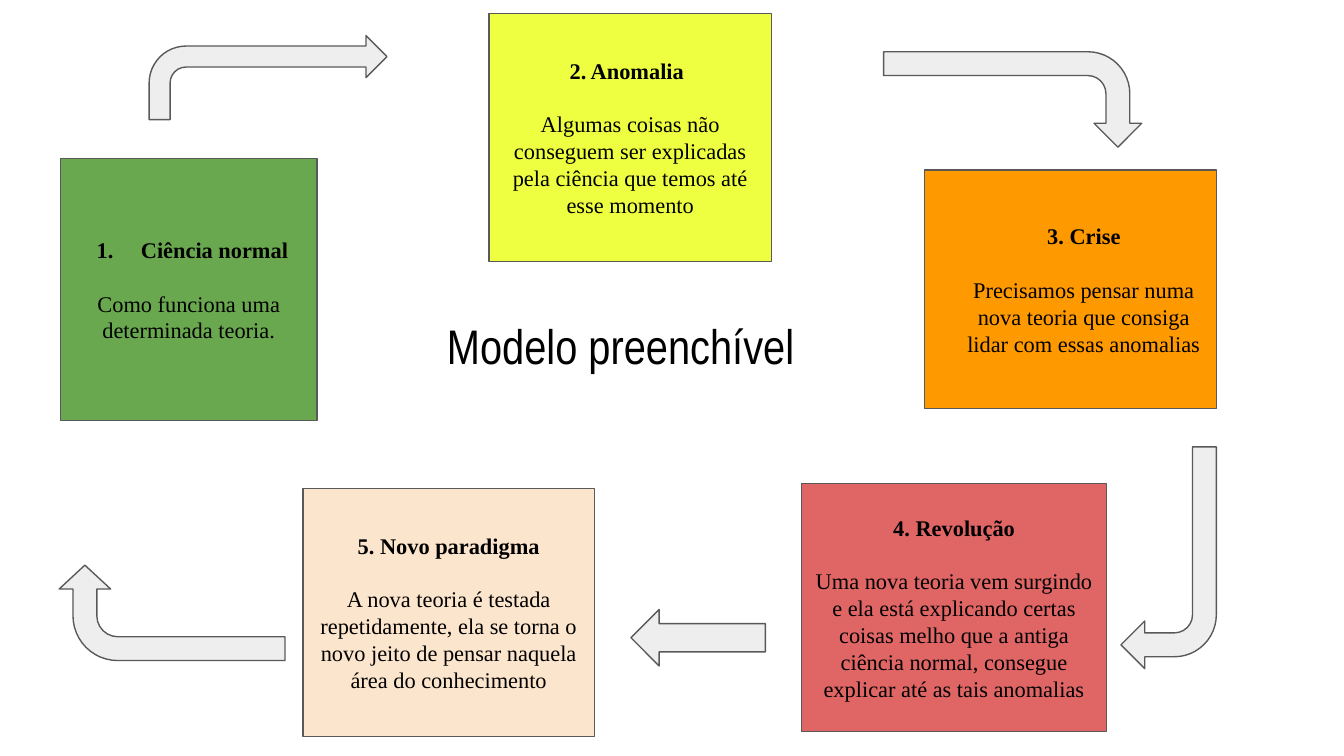
from dataclasses import dataclass

from lxml.etree import SubElement
from pptx import Presentation
from pptx.dml.color import RGBColor
from pptx.enum.shapes import MSO_SHAPE
from pptx.enum.text import MSO_ANCHOR, PP_ALIGN
from pptx.oxml.ns import qn
from pptx.util import Inches, Pt

CELL = 0.1
COLUMNS, ROWS = 100, 56.25


@dataclass(frozen=True)
class Theme:
    ink: str = "000000"
    outline: str = "595959"
    arrow: str = "EEEEEE"
    green: str = "6AA84F"
    yellow: str = "EEFF41"
    orange: str = "FF9900"
    red: str = "E06666"
    peach: str = "FCE5CD"
    serif: str = "Times New Roman"
    narrow: str = "Arial Narrow"
    body_size: int = 12
    title_size: int = 26
    outline_width: float = 0.75
    heading_gap: float = 14.4


@dataclass(frozen=True)
class Area:
    column: float
    row: float
    columns: float
    rows: float

    def lengths(self) -> list:
        return [grid(value) for value in (self.column, self.row, self.columns, self.rows)]


@dataclass(frozen=True)
class Stage:
    area: Area
    fill: str
    heading: str
    body: str
    heading_indent: float = 0
    body_indent: float = 0
    heading_align: PP_ALIGN = PP_ALIGN.CENTER
    numbered: bool = False


@dataclass(frozen=True)
class Arrow:
    area: Area
    rotation: int = 0
    adjustments: tuple = (0.25, 0.25, 0.25, 0.44)
    kind: MSO_SHAPE = MSO_SHAPE.BENT_ARROW


THEME = Theme()

STAGES = (
    Stage(Area(4.5, 11.8, 19.1, 19.5), THEME.green, "Ciência normal",
          "Como funciona uma determinada teoria.",
          heading_indent=5, heading_align=PP_ALIGN.LEFT, numbered=True),
    Stage(Area(36.4, 1, 21, 18.45), THEME.yellow, "2. Anomalia",
          "Algumas coisas não conseguem ser explicadas pela ciência que temos até esse momento",
          heading_indent=5, heading_align=PP_ALIGN.LEFT),
    Stage(Area(68.8, 12.65, 21.7, 17.75), THEME.orange, "3. Crise",
          "Precisamos pensar numa nova teoria que consiga lidar com essas anomalias",
          heading_indent=2, body_indent=2),
    Stage(Area(59.65, 36, 22.7, 18.45), THEME.red, "4. Revolução",
          "Uma nova teoria vem surgindo e ela está explicando certas coisas melho que a antiga "
          "ciência normal, consegue explicar até as tais anomalias"),
    Stage(Area(22.55, 36.35, 21.7, 18.45), THEME.peach, "5. Novo paradigma",
          "A nova teoria é testada repetidamente, ela se torna o novo jeito de pensar naquela "
          "área do conhecimento"),
)

ARROWS = (
    Arrow(Area(11.1, 2.65, 17.7, 6.25)),
    Arrow(Area(71.8, -2.2, 7.1, 19.2), 90),
    Arrow(Area(83.4, 33.25, 7.1, 16.5), 180),
    Arrow(Area(9.25, 37.2, 7.1, 16.8), 270, (0.25, 0.27, 0.25, 0.47)),
    Arrow(Area(46.95, 45.35, 10, 4.2), 0, (0.5, 0.5), MSO_SHAPE.LEFT_ARROW),
)

TITLE_AREA = Area(31.3, 22.5, 29.8, 10.8)


def grid(cells: float) -> int:
    """Turn a count of grid cells into a length."""
    return Inches(cells * CELL)


def apply(target, formats: dict) -> None:
    """Set each format value on the target."""
    for name, value in formats.items():
        setattr(target, name, value)


def prepare_frame(frame, anchor: MSO_ANCHOR) -> None:
    """Give a text frame wrapping, equal margins and an anchor."""
    margins = {f"margin_{side}": grid(1) for side in ("left", "top", "right", "bottom")}
    apply(frame, {"word_wrap": True, "vertical_anchor": anchor, **margins})


def write(paragraph, text: str, font: str, size: int, bold: bool = False,
          align: PP_ALIGN = PP_ALIGN.CENTER, indent: float = 0) -> None:
    """Fill a paragraph with one formatted run."""
    run = paragraph.add_run()
    run.text = text
    apply(run.font, {"name": font, "size": Pt(size), "bold": bold})
    run.font.color.rgb = RGBColor.from_string(THEME.ink)
    paragraph.alignment = align
    paragraph._p.get_or_add_pPr().set("marL", str(grid(indent)))


def number(paragraph) -> None:
    """Number a paragraph with a hanging indent."""
    properties = paragraph._p.get_or_add_pPr()
    properties.set("indent", str(grid(-3.3)))
    color = SubElement(properties, qn("a:buClr"))
    SubElement(color, qn("a:srgbClr"), val=THEME.ink)
    SubElement(properties, qn("a:buAutoNum"), type="arabicPeriod")


def draw_shape(slide, kind: MSO_SHAPE, area: Area, fill: str):
    """Draw an outlined flat shape."""
    shape = slide.shapes.add_shape(kind, *area.lengths())
    shape.shadow.inherit = False
    shape.fill.solid()
    shape.fill.fore_color.rgb = RGBColor.from_string(fill)
    shape.line.color.rgb = RGBColor.from_string(THEME.outline)
    shape.line.width = Pt(THEME.outline_width)
    return shape


def draw_stage(slide, stage: Stage) -> None:
    """Draw one box with its heading and body."""
    frame = draw_shape(slide, MSO_SHAPE.RECTANGLE, stage.area, stage.fill).text_frame
    prepare_frame(frame, MSO_ANCHOR.MIDDLE)
    heading = frame.paragraphs[0]
    write(heading, stage.heading, THEME.serif, THEME.body_size, True,
          stage.heading_align, stage.heading_indent)
    heading.space_after = Pt(THEME.heading_gap)
    if stage.numbered:
        number(heading)
    write(frame.add_paragraph(), stage.body, THEME.serif, THEME.body_size,
          indent=stage.body_indent)


def draw_arrow(slide, arrow: Arrow) -> None:
    """Draw one arrow of the cycle."""
    shape = draw_shape(slide, arrow.kind, arrow.area, THEME.arrow)
    shape.rotation = arrow.rotation
    for index, value in enumerate(arrow.adjustments):
        shape.adjustments[index] = value


def draw_title(slide) -> None:
    """Write the title in the middle of the cycle."""
    frame = slide.shapes.add_textbox(*TITLE_AREA.lengths()).text_frame
    prepare_frame(frame, MSO_ANCHOR.TOP)
    write(frame.paragraphs[0], "Modelo preenchível", THEME.narrow, THEME.title_size)


def main() -> None:
    """Build and save the slide."""
    presentation = Presentation()
    apply(presentation, {"slide_width": grid(COLUMNS), "slide_height": grid(ROWS)})
    slide = presentation.slides.add_slide(presentation.slide_layouts[6])
    for stage in STAGES:
        draw_stage(slide, stage)
    for arrow in ARROWS:
        draw_arrow(slide, arrow)
    draw_title(slide)
    presentation.save("out.pptx")


if __name__ == "__main__":
    main()
